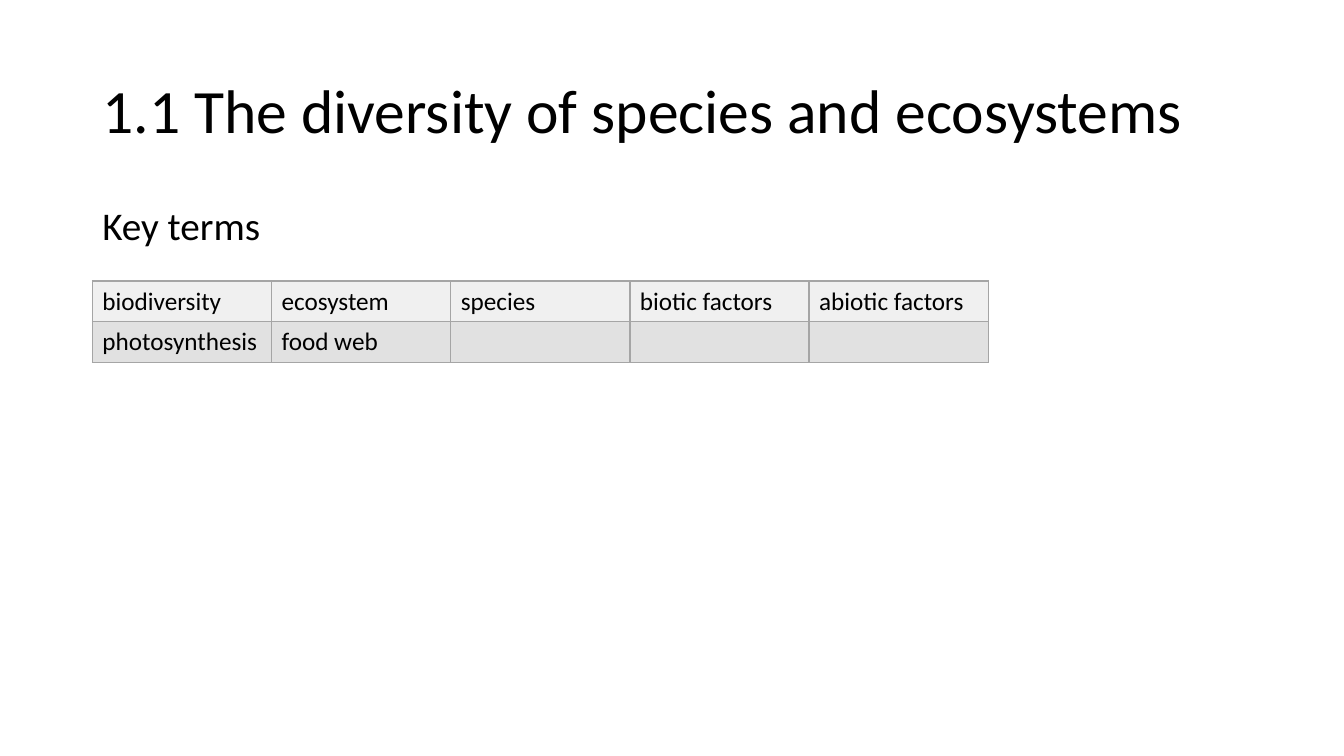
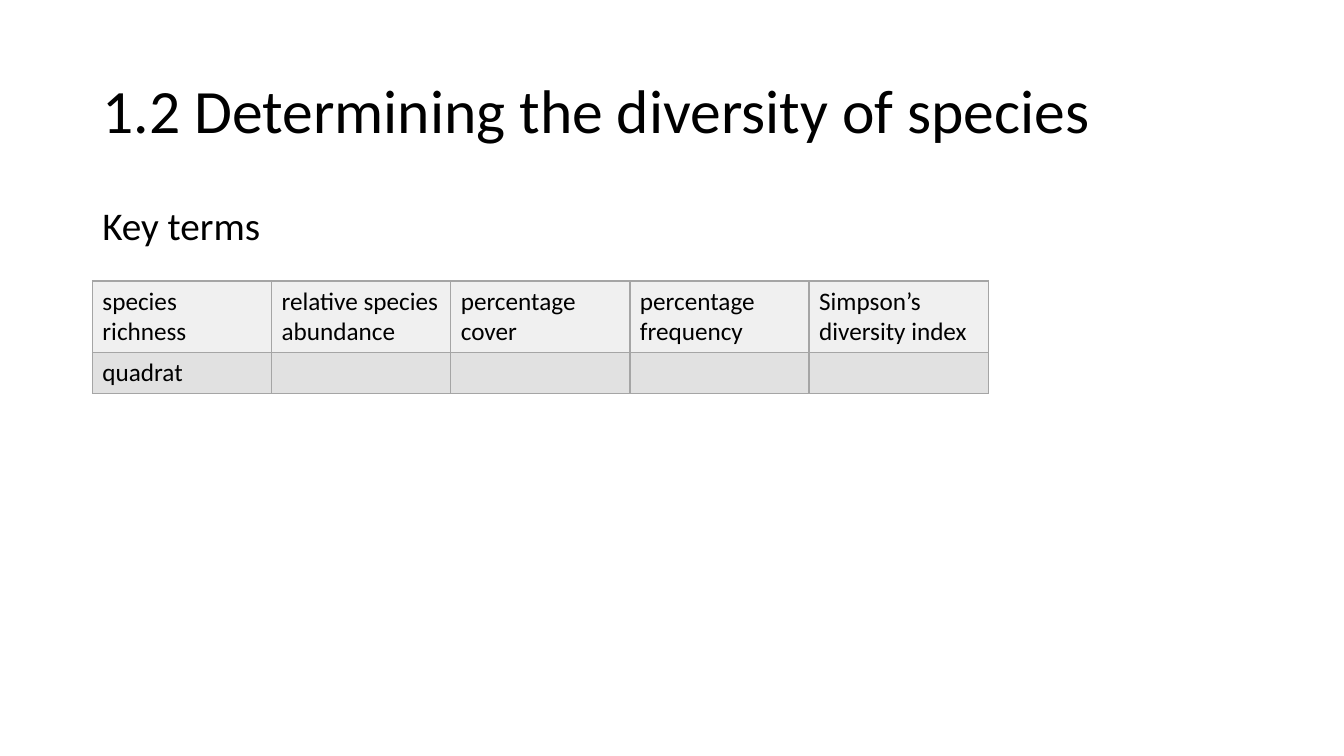
from dataclasses import dataclass

import lxml.etree
import pptx
import pptx.dml.color
import pptx.enum.text
import pptx.oxml.ns
import pptx.presentation
import pptx.slide
import pptx.table
import pptx.text.text
import pptx.util

Pt = pptx.util.Pt

FONT = "Calibri"
TEXT_COLOR = "000000"
BORDER_COLOR = "A5A5A5"
ROW_FILLS = ("F0F0F0", "E1E1E1")

SLIDE_WIDTH, SLIDE_HEIGHT = 960, 540
LEFT, CONTENT_WIDTH = 66, 828
TITLE_TOP, TITLE_HEIGHT = 28.75, 104.4
HEADING_TOP, HEADING_HEIGHT = 143.75, 56
TABLE_TOP, COLUMN_WIDTH, COLUMN_COUNT = 200.7, 128, 5
LINE_HEIGHT, ROW_PADDING = 22, 7.2

TITLE_ONLY_LAYOUT = 5


@dataclass(frozen=True)
class KeyTermsSlide:
    """Each term is a tuple of paragraphs; missing terms leave cells empty."""

    title: str
    rows: tuple[tuple[tuple[str, ...], ...], ...]
    lines_per_row: tuple[int, ...]


SLIDES = (
    KeyTermsSlide(
        title="1.1 The diversity of species and ecosystems",
        rows=(
            (("biodiversity",), ("ecosystem",), ("species",), ("biotic factors",), ("abiotic factors",)),
            (("photosynthesis",), ("food web",)),
        ),
        lines_per_row=(1, 1),
    ),
    KeyTermsSlide(
        title="1.2 Determining the diversity of species",
        rows=(
            (
                ("species richness",),
                ("relative species", "abundance"),
                ("percentage cover",),
                ("percentage", "frequency"),
                ("Simpson’s", "diversity index"),
            ),
            (("quadrat",),),
        ),
        lines_per_row=(2, 1),
    ),
)


def rgb(color: str) -> pptx.dml.color.RGBColor:
    return pptx.dml.color.RGBColor.from_string(color)


def write_paragraphs(frame: pptx.text.text.TextFrame, lines: tuple[str, ...], size: float,
                     line_spacing: float = 1.0, space_before: float = 0) -> None:
    for index, line in enumerate(lines):
        paragraph = frame.add_paragraph() if index else frame.paragraphs[0]
        paragraph.alignment = pptx.enum.text.PP_ALIGN.LEFT
        paragraph.line_spacing = line_spacing
        paragraph.space_before = Pt(space_before)
        run = paragraph.add_run()
        run.text = line
        run.font.name = FONT
        run.font.size = Pt(size)
        run.font.color.rgb = rgb(TEXT_COLOR)


def add_title(slide: pptx.slide.Slide, text: str) -> None:
    title = slide.shapes.title
    title.left, title.top = Pt(LEFT), Pt(TITLE_TOP)
    title.width, title.height = Pt(CONTENT_WIDTH), Pt(TITLE_HEIGHT)
    title.text_frame.vertical_anchor = pptx.enum.text.MSO_ANCHOR.MIDDLE
    write_paragraphs(title.text_frame, (text,), 44, line_spacing=0.9)


def add_heading(slide: pptx.slide.Slide, text: str) -> None:
    heading = slide.shapes.add_textbox(Pt(LEFT), Pt(HEADING_TOP), Pt(CONTENT_WIDTH), Pt(HEADING_HEIGHT))
    heading.text_frame.word_wrap = True
    write_paragraphs(heading.text_frame, (text,), 28, line_spacing=0.9, space_before=10)


def format_cell(cell: pptx.table._Cell, fill: str) -> None:
    """Draw the four borders, then the fill, in the order the schema requires."""
    properties = cell._tc.get_or_add_tcPr()
    qualified = pptx.oxml.ns.qn
    for side in ("L", "R", "T", "B"):
        border = lxml.etree.SubElement(properties, qualified(f"a:ln{side}"), w=str(Pt(1)))
        solid = lxml.etree.SubElement(border, qualified("a:solidFill"))
        lxml.etree.SubElement(solid, qualified("a:srgbClr"), val=BORDER_COLOR)
    cell.fill.solid()
    cell.fill.fore_color.rgb = rgb(fill)


def add_terms_table(slide: pptx.slide.Slide, content: KeyTermsSlide) -> None:
    heights = [ROW_PADDING + lines * LINE_HEIGHT for lines in content.lines_per_row]
    table = slide.shapes.add_table(
        len(content.rows), COLUMN_COUNT, Pt(LEFT), Pt(TABLE_TOP),
        Pt(COLUMN_COUNT * COLUMN_WIDTH), Pt(sum(heights)),
    ).table
    table.first_row = False
    table.horz_banding = False
    for column in table.columns:
        column.width = Pt(COLUMN_WIDTH)
    for row, height, terms, fill in zip(table.rows, heights, content.rows, ROW_FILLS):
        row.height = Pt(height)
        for cell in row.cells:
            format_cell(cell, fill)
        for cell, term in zip(row.cells, terms):
            write_paragraphs(cell.text_frame, term, 18)


def add_key_terms_slide(presentation: pptx.presentation.Presentation, content: KeyTermsSlide) -> None:
    slide = presentation.slides.add_slide(presentation.slide_layouts[TITLE_ONLY_LAYOUT])
    add_title(slide, content.title)
    add_heading(slide, "Key terms")
    add_terms_table(slide, content)


def main() -> None:
    presentation = pptx.Presentation()
    presentation.slide_width = Pt(SLIDE_WIDTH)
    presentation.slide_height = Pt(SLIDE_HEIGHT)
    for content in SLIDES:
        add_key_terms_slide(presentation, content)
    presentation.save("out.pptx")


if __name__ == "__main__":
    main()
